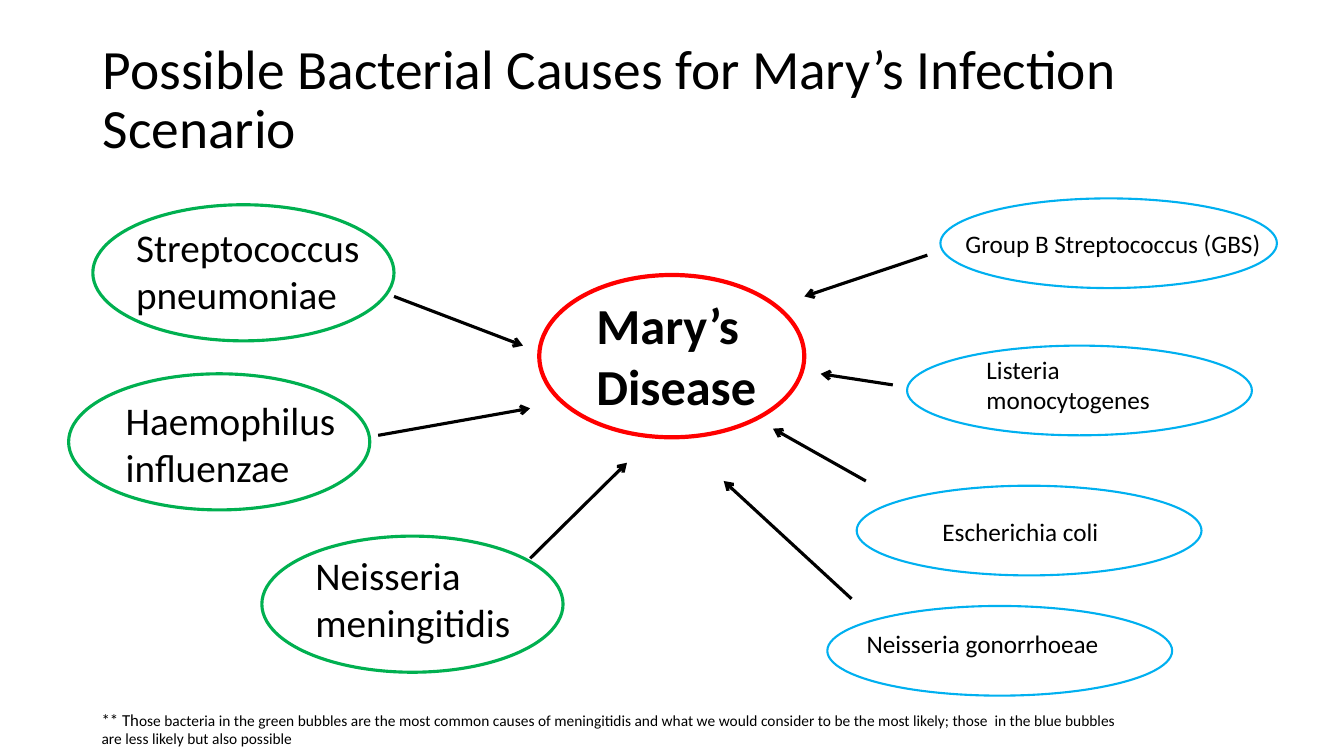
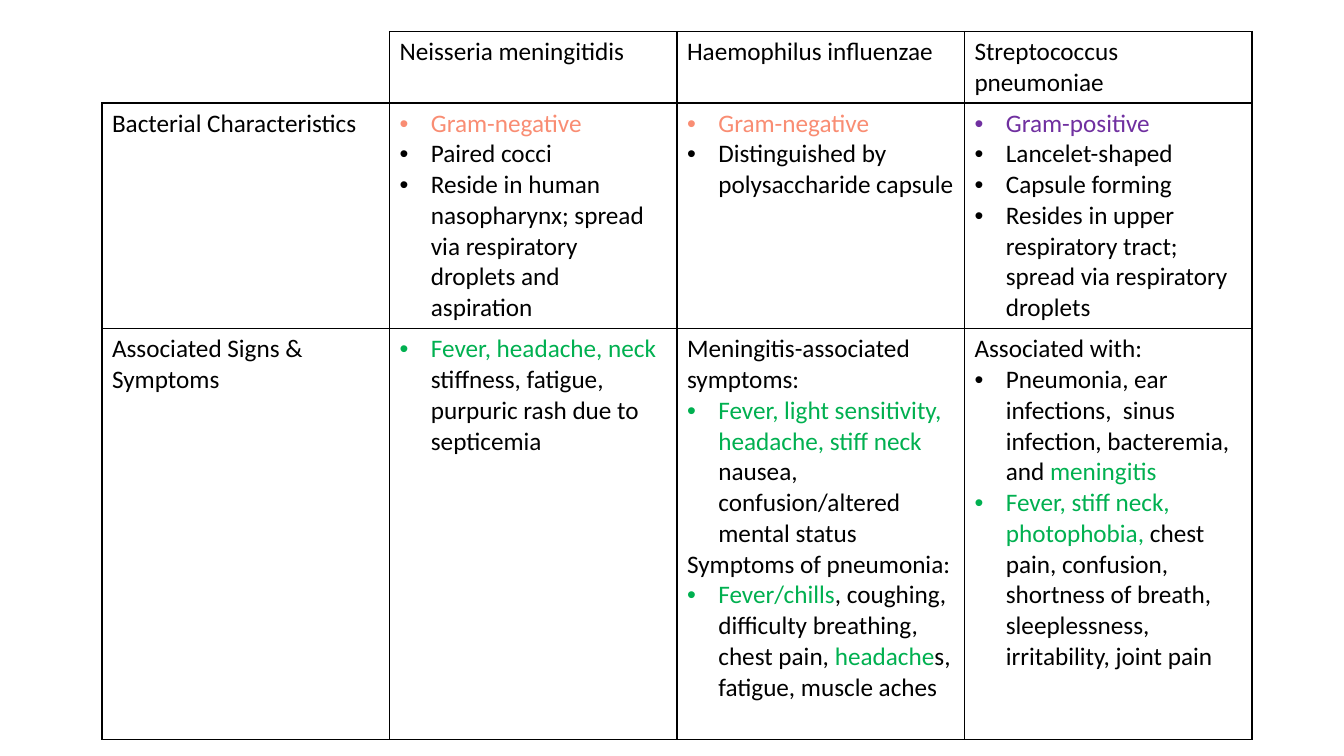
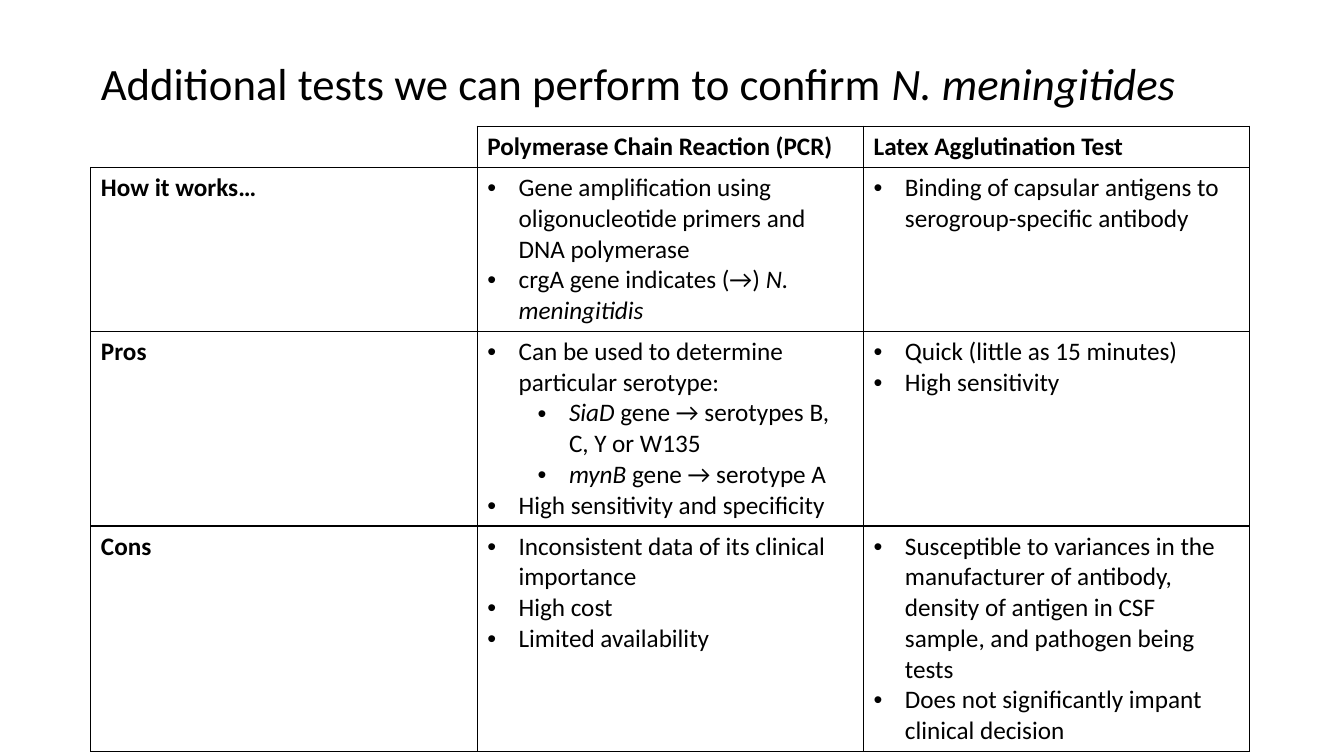
from dataclasses import dataclass
from typing import NamedTuple

from lxml import etree
from pptx import Presentation
from pptx.dml.color import RGBColor
from pptx.enum import shapes, text
from pptx.oxml import ns
from pptx.util import Cm, Pt

# Shared style
FONT = "Calibri"
BLACK = RGBColor(0x00, 0x00, 0x00)
RED = RGBColor(0xFF, 0x00, 0x00)
GREEN = RGBColor(0x00, 0xB0, 0x50)
BLUE = RGBColor(0x00, 0xB0, 0xF0)
SALMON = RGBColor(0xF9, 0x8D, 0x73)
PURPLE = RGBColor(0x70, 0x30, 0xA0)
TABLE_SIZE = 18
BULLET_INDENT = 0.79
LEVEL_INDENT = 1.27


class Box(NamedTuple):
    left: float
    top: float
    width: float
    height: float


class Run(NamedTuple):
    text: str
    color: RGBColor = BLACK
    bold: bool = False
    italic: bool = False
    size: float | None = None


@dataclass
class Para:
    runs: list[Run]
    level: int | None = None  # None means no bullet
    line_spacing: float | None = None


@dataclass
class Bubble:
    label: str
    label_box: Box
    ellipse: Box
    arrow: tuple[float, float, float, float] | None = None


@dataclass
class BubbleStyle:
    color: RGBColor
    weight: float
    size: float
    bold: bool = False


Cell = list[Para]


def as_run(item: Run | str) -> Run:
    return item if isinstance(item, Run) else Run(item)


def plain(*items: Run | str) -> Para:
    return Para([as_run(item) for item in items])


def bullet(*items: Run | str, level: int = 0) -> Para:
    return Para([as_run(item) for item in items], level)


def green(words: str) -> Run:
    return Run(words, GREEN)


def bold(words: str) -> Run:
    return Run(words, bold=True)


def italic(words: str) -> Run:
    return Run(words, italic=True)


def lengths(values) -> list[Cm]:
    return [Cm(value) for value in values]


# Text
def add_bullet(paragraph, level: int) -> None:
    properties = paragraph._p.get_or_add_pPr()
    properties.set("marL", str(Cm(BULLET_INDENT + level * LEVEL_INDENT)))
    properties.set("indent", str(-Cm(BULLET_INDENT)))
    etree.SubElement(properties, ns.qn("a:buFont"), typeface="Arial")
    etree.SubElement(properties, ns.qn("a:buChar"), char="•")


def write_text(frame, paragraphs: list[Para], size: float) -> None:
    for index, item in enumerate(paragraphs):
        paragraph = frame.add_paragraph() if index else frame.paragraphs[0]
        if item.line_spacing:
            paragraph.line_spacing = item.line_spacing
        if item.level is not None:
            paragraph.level = item.level
            add_bullet(paragraph, item.level)
        for part in item.runs:
            run = paragraph.add_run()
            run.text = part.text
            run.font.color.rgb = part.color
            values = {"name": FONT, "size": Pt(part.size or size),
                      "bold": part.bold, "italic": part.italic}
            for name, value in values.items():
                setattr(run.font, name, value)


def add_text(slide, box: Box, paragraphs: list[Para], size: float,
             anchor=text.MSO_ANCHOR.TOP, auto_size=text.MSO_AUTO_SIZE.SHAPE_TO_FIT_TEXT) -> None:
    frame = slide.shapes.add_textbox(*lengths(box)).text_frame
    values = {"word_wrap": True, "vertical_anchor": anchor, "auto_size": auto_size}
    for name, value in values.items():
        setattr(frame, name, value)
    write_text(frame, paragraphs, size)


def add_title(slide, box: Box, runs: list[Run], size: float) -> None:
    add_text(slide, box, [Para(runs, line_spacing=0.9)], size,
             text.MSO_ANCHOR.MIDDLE, text.MSO_AUTO_SIZE.NONE)


# Bubbles and arrows
def add_arrow(slide, ends: tuple[float, float, float, float]) -> None:
    arrow = slide.shapes.add_connector(shapes.MSO_CONNECTOR.STRAIGHT, *lengths(ends))
    arrow.line.color.rgb = BLACK
    arrow.line.width = Pt(2.25)
    etree.SubElement(arrow.line._get_or_add_ln(), ns.qn("a:tailEnd"), type="arrow")
    etree.SubElement(arrow._element.spPr, ns.qn("a:effectLst"))


def add_bubble(slide, bubble: Bubble, style: BubbleStyle) -> None:
    add_text(slide, bubble.label_box, [plain(Run(bubble.label, bold=style.bold))], style.size)
    ellipse = slide.shapes.add_shape(shapes.MSO_SHAPE.OVAL, *lengths(bubble.ellipse))
    ellipse.shadow.inherit = False
    ellipse.fill.background()
    ellipse.line.color.rgb = style.color
    ellipse.line.width = Pt(style.weight)
    if bubble.arrow:
        add_arrow(slide, bubble.arrow)


# Tables
def set_borders(cell, sides: str) -> None:
    properties = cell._tc.get_or_add_tcPr()
    for side in "LRTB":
        line = etree.SubElement(properties, ns.qn(f"a:ln{side}"), w=str(Pt(1)))
        if side in sides:
            fill = etree.SubElement(line, ns.qn("a:solidFill"))
            etree.SubElement(fill, ns.qn("a:srgbClr"), val=str(BLACK))
        else:
            etree.SubElement(line, ns.qn("a:noFill"))


def add_table(slide, box: Box, heights: list[float], rows: list[list[Cell]]) -> None:
    count = len(rows[0])
    table = slide.shapes.add_table(len(rows), count, *lengths(box)).table
    table.first_row = table.horz_banding = False
    for column in table.columns:
        column.width = Cm(box.width / count)
    for row, height in zip(table.rows, heights):
        row.height = Cm(height)
    for row_index, row in enumerate(rows):
        for column_index, paragraphs in enumerate(row):
            cell = table.cell(row_index, column_index)
            is_corner = row_index == column_index == 0
            set_borders(cell, "RB" if is_corner else "LRTB")
            cell.fill.background()
            write_text(cell.text_frame, paragraphs, TABLE_SIZE)


# Slide 1: possible causes
CENTER_STYLE = BubbleStyle(RED, 3, 36, True)
LIKELY_STYLE = BubbleStyle(GREEN, 2.25, 28)
UNLIKELY_STYLE = BubbleStyle(BLUE, 1.5, 18)
LIKELY_SIZE = (7.59, 3.43)
UNLIKELY_SIZE = (8.69, 2.26)

DISEASE = Bubble("Mary’s Disease", Box(14.78, 7.29, 7.11, 3.33), Box(13.59, 6.93, 6.68, 4.09))
LIKELY = [
    Bubble("Streptococcus pneumoniae", Box(3.18, 5.49, 6.45, 2.64),
           Box(2.34, 5.16, *LIKELY_SIZE), (9.93, 7.47, 13.18, 8.71)),
    Bubble("Haemophilus influenzae", Box(2.92, 9.86, 5.99, 2.64),
           Box(1.73, 9.42, *LIKELY_SIZE), (9.53, 10.97, 13.36, 10.29)),
    Bubble("Neisseria meningitidis", Box(7.7, 13.77, 6.45, 2.64),
           Box(6.6, 13.51, *LIKELY_SIZE), (13.36, 14.07, 15.8, 11.66)),
]
UNLIKELY = [
    Bubble("Group B Streptococcus (GBS)", Box(24.08, 5.64, 8.43, 1.02),
           Box(23.7, 5, 8.48, 2.26), (23.37, 6.43, 20.27, 7.47)),
    Bubble("Listeria monocytogenes", Box(24.61, 8.81, 5.87, 1.8),
           Box(22.86, 8.71, *UNLIKELY_SIZE), (22.5, 9.7, 20.68, 9.42)),
    Bubble("Escherichia coli", Box(23.5, 12.88, 5.28, 1.02),
           Box(21.59, 12.24, *UNLIKELY_SIZE), (21.82, 12.12, 19.48, 10.8)),
    Bubble("Neisseria gonorrhoeae", Box(21.59, 15.72, 6.71, 1.02),
           Box(20.85, 15.27, *UNLIKELY_SIZE), (21.46, 15.09, 18.24, 12.12)),
]


def build_causes(slide) -> None:
    add_title(slide, Box(2.34, 0.97, 29.21, 3.15),
              [Run("Possible Bacterial Causes for Mary’s Infection Scenario")], 39.6)
    groups = [([DISEASE], CENTER_STYLE), (LIKELY, LIKELY_STYLE), (UNLIKELY, UNLIKELY_STYLE)]
    for bubbles, style in groups:
        for bubble in bubbles:
            add_bubble(slide, bubble, style)
    note = plain(
        Run("** Th", size=12),
        "ose bacteria in the green bubbles are the most common causes of meningitidis and what "
        "we would consider to be the most likely; those  in the blue bubbles are less likely "
        "but also possible")
    add_text(slide, Box(2.31, 17.75, 26.47, 1.24), [note], 11)


# Slide 2: comparison of the likely bacteria
BACTERIA_ROWS = [
    [[], [plain("Neisseria meningitidis")], [plain("Haemophilus influenzae")],
     [plain("Streptococcus pneumoniae")]],
    [
        [plain("Bacterial Characteristics")],
        [bullet(Run("Gram-negative", SALMON)), bullet("Paired cocci"),
         bullet("Reside in human nasopharynx; spread via respiratory droplets and aspiration")],
        [bullet(Run("Gram-negative", SALMON)),
         bullet("Distinguished by polysaccharide capsule")],
        [bullet(Run("Gram-positive", PURPLE)), bullet("Lancelet-shaped"),
         bullet("Capsule forming"),
         bullet("Resides in upper respiratory tract; spread via respiratory droplets")],
    ],
    [
        [plain("Associated Signs & Symptoms")],
        [bullet(green("Fever, headache, neck "),
                "stiffness, fatigue, purpuric rash due to septicemia")],
        [plain("Meningitis-associated symptoms:"),
         bullet(green("Fever, light sensitivity, headache, stiff neck "),
                "nausea, confusion/altered mental status"),
         plain("Symptoms of pneumonia:"),
         bullet(green("Fever/chills"), ", coughing, difficulty breathing, chest pain, ",
                green("headache"), "s, fatigue, muscle aches")],
        [plain("Associated with:"),
         bullet("Pneumonia, ear infections,  sinus infection, bacteremia, and",
                green(" meningitis")),
         bullet(green("Fever, stiff neck, photophobia,"),
                " chest pain, confusion, shortness of breath, sleeplessness, irritability, "
                "joint pain")],
    ],
]


def build_bacteria(slide) -> None:
    add_table(slide, Box(2.57, 0.79, 28.98, 17.81), [1.78, 5.69, 10.34], BACTERIA_ROWS)


# Slide 3: confirming tests
TEST_ROWS = [
    [[], [plain(bold("Polymerase Chain Reaction (PCR)"))],
     [plain(bold("Latex Agglutination Test"))]],
    [
        [plain(bold("How it works…"))],
        [bullet("Gene amplification using oligonucleotide primers and DNA polymerase"),
         bullet("crgA gene indicates (→) ", italic("N. meningitidis"))],
        [bullet("Binding of capsular antigens to serogroup-specific antibody")],
    ],
    [
        [plain(bold("Pros"))],
        [bullet("Can be used to determine particular serotype:"),
         bullet(italic("SiaD"), " gene → serotypes B, C, Y or W135", level=1),
         bullet(italic("mynB "), "gene → serotype A", level=1),
         bullet("High sensitivity and specificity")],
        [bullet("Quick (little as 15 minutes)"), bullet("High sensitivity")],
    ],
    [
        [plain(bold("Cons"))],
        [bullet("Inconsistent data of its clinical importance"), bullet("High cost"),
         bullet("Limited availability")],
        [bullet("Susceptible to variances in the manufacturer of antibody, density of antigen "
                "in CSF sample, and pathogen being tests"),
         bullet("Does not significantly impant clinical decision")],
    ],
]


def build_tests(slide) -> None:
    add_title(slide, Box(2.29, 0.33, 29.21, 3.68),
              [Run("Additional tests we can perform to confirm "), italic("N. meningitides")], 32)
    add_table(slide, Box(2.29, 3.18, 29.21, 15.76), [1.04, 4.13, 4.9, 5.69], TEST_ROWS)


def main() -> None:
    presentation = Presentation()
    presentation.slide_width = Cm(33.87)
    presentation.slide_height = Cm(19.05)
    blank = presentation.slide_layouts[6]
    for build in (build_causes, build_bacteria, build_tests):
        build(presentation.slides.add_slide(blank))
    presentation.save("out.pptx")


if __name__ == "__main__":
    main()
